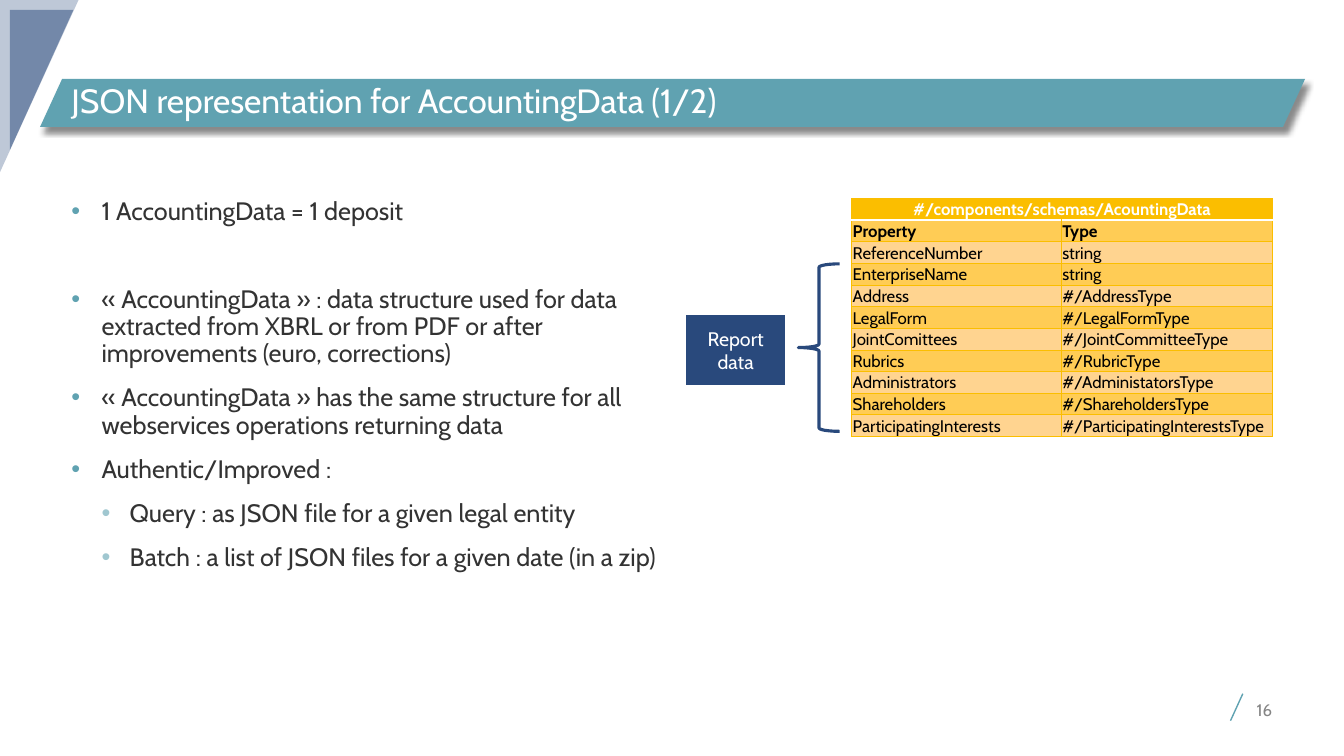
from pptx import Presentation
from pptx.dml.color import RGBColor
from pptx.enum.shapes import MSO_CONNECTOR as Link, MSO_SHAPE as Kind
from pptx.enum.text import MSO_ANCHOR as Anchor, PP_ALIGN as Align
from pptx.oxml import parse_xml
from pptx.oxml.ns import nsdecls, qn
from pptx.util import Cm, Pt

TITLE = "JSON representation for AccountingData (1/2)"
NUMBER = "16"
LABEL = ["Report", "data"]
# level, space before in points, text
POINTS = [
    (0, 0, "1 AccountingData = 1 deposit"),
    (0, 37.5, "« AccountingData » : data structure used for data extracted "
              "from XBRL or from PDF or after improvements (euro, corrections)"),
    (0, 6, "« AccountingData » has the same structure for all webservices "
           "operations returning data"),
    (0, 6, "Authentic/Improved :"),
    (1, 6, "Query : as JSON file for a given legal entity"),
    (1, 6, "Batch : a list of JSON files for a given date (in a zip)"),
]
ROWS = [
    ("#/components/schemas/AcountingData", ""),
    ("Property", "Type"),
    ("ReferenceNumber", "string"),
    ("EnterpriseName", "string"),
    ("Address", "#/AddressType"),
    ("LegalForm", "#/LegalFormType"),
    ("JointComittees", "#/JointCommitteeType"),
    ("Rubrics", "#/RubricType"),
    ("Administrators", "#/AdministatorsType"),
    ("Shareholders", "#/ShareholdersType"),
    ("ParticipatingInterests", "#/ParticipatingInterestsType"),
]
COLS = [5.28, 5.33]
ROW_H = 0.545
# bullet colour, left margin and hanging indent in cm
LEVELS = [("60A2B1", 0.76, 0.76), ("A0C7D0", 1.47, 0.71)]
# width, height, offset in cm, opacity in percent
CORNERS = [(1.98, 4.34, 0, 30), (1.6, 3.53, 0.25, 50)]
TEAL, NAVY, GOLD, WHITE = "60A2B1", "29497C", "FBBE00", "FFFFFF"
BANDS = ["FFD490", "FFCC55"]


def color(code):
    return RGBColor.from_string(code)


def assign(item, values):
    for name, value in values.items():
        setattr(item, name, value)


def box(*dims):
    return [Cm(dim) for dim in dims]


def node(text):
    return parse_xml(text.replace(" ", f" {nsdecls('a')} ", 1))


def write(par, text, size, code, bold=False, **layout):
    run = par.add_run()
    run.text = text
    assign(run.font, {"name": "Cabin", "size": Pt(size), "bold": bold})
    run.font.color.rgb = color(code)
    assign(par, layout)


def frame(owner, anchor, wrap=True):
    """Return the text frame of a shape, with no margins."""
    area = owner.text_frame
    assign(area, {"margin_left": 0, "margin_right": 0, "margin_top": 0,
                  "margin_bottom": 0, "vertical_anchor": anchor,
                  "word_wrap": wrap})
    return area


def paint(shape, fill, line=None, width=1):
    shape.shadow.inherit = False
    if fill:
        shape.fill.solid()
        shape.fill.fore_color.rgb = color(fill)
    else:
        shape.fill.background()
    if line:
        shape.line.color.rgb = color(line)
        shape.line.width = Pt(width)
    else:
        shape.line.fill.background()


def edge(cell, side, code, width):
    cell._tc.get_or_add_tcPr().append(node(
        f'<a:ln{side} w="{Pt(width)}"><a:solidFill><a:srgbClr val="{code}"/>'
        f'</a:solidFill></a:ln{side}>'))


def add_frame(shapes):
    """Draw the corner triangles, the title banner and the page number."""
    for wide, high, gap, alpha in CORNERS:
        path = shapes.build_freeform(Cm(gap), Cm(gap))
        path.add_line_segments([box(gap + wide, gap), box(gap, gap + high)])
        shape = path.convert_to_shape()
        paint(shape, NAVY)
        tint = shape._element.spPr.find(f".//{qn('a:srgbClr')}")
        tint.append(node(f'<a:alpha val="{alpha * 1000}"/>'))

    banner = shapes.add_shape(Kind.PARALLELOGRAM, *box(1.01, 1.99, 31.88, 1.21))
    banner.adjustments[0] = 0.46
    paint(banner, TEAL)
    banner._element.spPr.find(qn("a:effectLst")).append(node(
        '<a:outerShdw blurRad="50800" dist="50800" dir="3600000">'
        '<a:srgbClr val="000000"><a:alpha val="45000"/></a:srgbClr>'
        '</a:outerShdw>'))

    title = frame(shapes.add_textbox(*box(1.8, 2.11, 30.28, 0.97)), Anchor.MIDDLE)
    write(title.paragraphs[0], TITLE, 24, WHITE, line_spacing=0.9)

    slash = shapes.add_connector(Link.STRAIGHT, *box(31.32, 17.48, 31.01, 18.16))
    slash.line.color.rgb = color(TEAL)
    slash.line.width = Pt(1)
    slash._element.spPr.append(node("<a:effectLst />"))
    page = frame(shapes.add_textbox(*box(31.32, 17.7, 0.74, 0.46)), Anchor.MIDDLE)
    write(page.paragraphs[0], NUMBER, 12, "858585",
          alignment=Align.RIGHT, line_spacing=0.9)


def add_points(shapes):
    body = frame(shapes.add_textbox(*box(1.8, 5, 15.88, 10.34)), Anchor.TOP)
    for idx, (level, before, text) in enumerate(POINTS):
        par = body.add_paragraph() if idx else body.paragraphs[0]
        tint, left, hang = LEVELS[level]
        props = par._p.get_or_add_pPr()
        props.set("marL", str(Cm(left)))
        props.set("indent", str(-Cm(hang)))
        props.append(node(f'<a:buClr ><a:srgbClr val="{tint}"/></a:buClr>'))
        props.append(node('<a:buFont typeface="Arial"/>'))
        props.append(node('<a:buChar char="•"/>'))
        write(par, text, 18, "333333", level=level, line_spacing=0.9,
              space_before=Pt(before), space_after=Pt(6))


def add_schema(shapes):
    """Draw the property table."""
    table = shapes.add_table(len(ROWS), len(COLS), *box(
        21.46, 5, sum(COLS), ROW_H * len(ROWS))).table
    assign(table, {"first_row": False, "horz_banding": False})
    for col, wide in zip(table.columns, COLS):
        col.width = Cm(wide)
    for r, texts in enumerate(ROWS):
        table.rows[r].height = Cm(ROW_H)
        for c, text in enumerate(texts):
            cell = table.cell(r, c)
            assign(cell, {"margin_left": Cm(0.03), "margin_right": Cm(0.03),
                          "margin_top": Cm(0.03), "margin_bottom": 0,
                          "vertical_anchor": Anchor.BOTTOM})
            for side in "LRTB":
                split = (r, side) in [(0, "B"), (1, "T")]
                edge(cell, side, *((WHITE, 1) if split else (GOLD, 0.5)))
            cell.fill.solid()
            cell.fill.fore_color.rgb = color(BANDS[r % 2] if r else GOLD)
            if text:
                write(cell.text_frame.paragraphs[0], text, 12,
                      "000000" if r else WHITE, bold=r < 2,
                      alignment=Align.LEFT if r else Align.CENTER)
    table.cell(0, 0).merge(table.cell(0, 1))


def add_label(shapes):
    brace = shapes.add_shape(Kind.LEFT_BRACE, *box(20.12, 6.65, 1.04, 4.22))
    paint(brace, None, NAVY, 2.25)
    label = shapes.add_shape(Kind.RECTANGLE, *box(17.27, 7.92, 2.54, 1.8))
    paint(label, NAVY, WHITE, 1.5)
    area = frame(label, Anchor.MIDDLE, False)
    for idx, word in enumerate(LABEL):
        par = area.add_paragraph() if idx else area.paragraphs[0]
        write(par, word, 14, WHITE, alignment=Align.CENTER)


def main():
    deck = Presentation()
    assign(deck, {"slide_width": Cm(33.87), "slide_height": Cm(19.05)})
    shapes = deck.slides.add_slide(deck.slide_layouts[6]).shapes
    for step in (add_frame, add_points, add_schema, add_label):
        step(shapes)
    deck.save("out.pptx")


if __name__ == "__main__":
    main()
